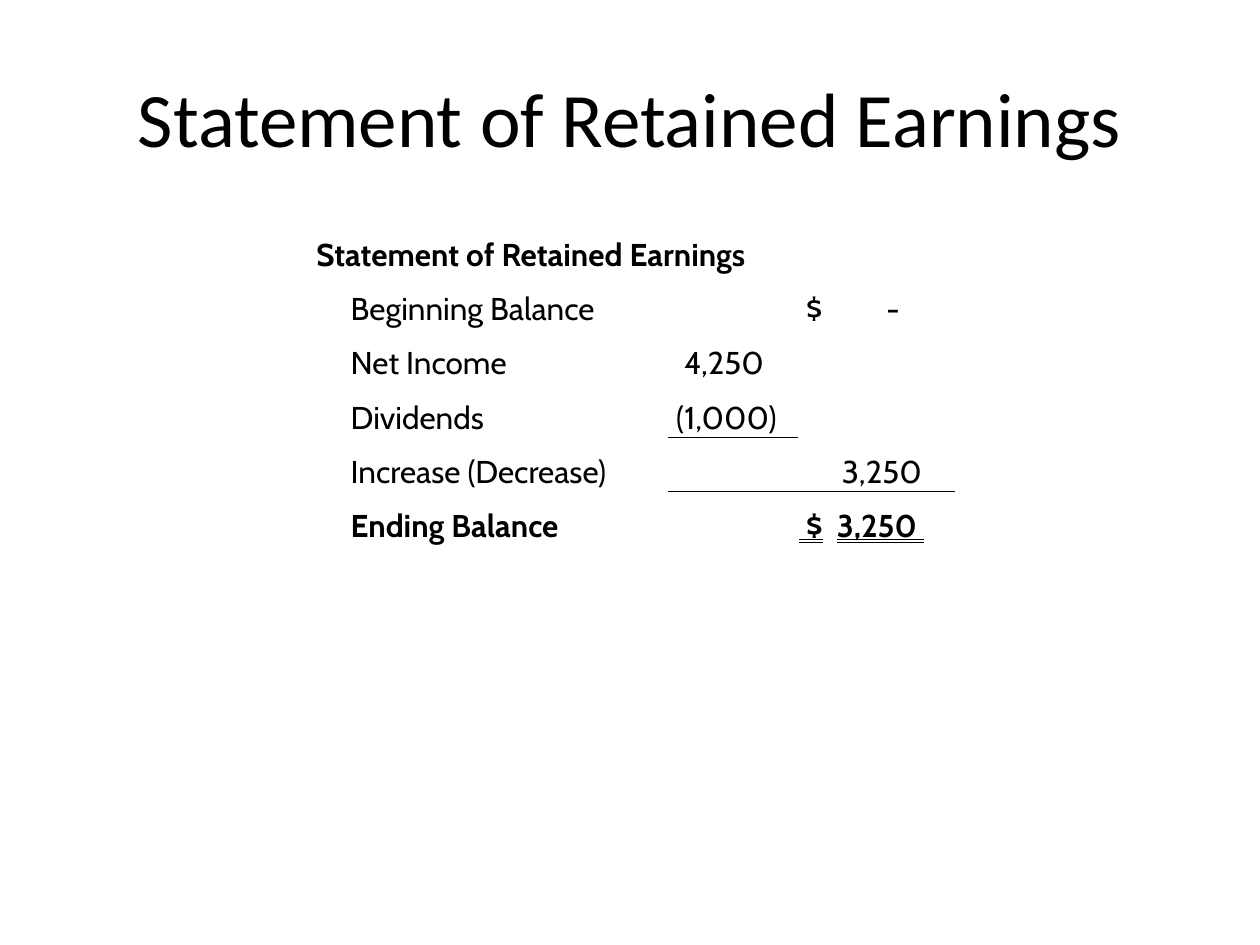
from dataclasses import dataclass

from lxml import etree
from pptx import Presentation
from pptx.dml.color import RGBColor
from pptx.enum.text import MSO_ANCHOR, MSO_UNDERLINE, PP_ALIGN
from pptx.oxml.ns import qn
from pptx.util import Cm, Pt

MIDDLE, BOTTOM = MSO_ANCHOR.MIDDLE, MSO_ANCHOR.BOTTOM
CENTER, LEFT = PP_ALIGN.CENTER, PP_ALIGN.LEFT
DOUBLE = MSO_UNDERLINE.DOUBLE_LINE
COLORS = {"ink": "000000"}
NO_STYLE = "{2D5ABB26-0587-4C30-8999-92F81FD0307C}"
COLUMN_WIDTHS = (0.69, 6.42, 2.62, 3.18)
ROW_HEIGHT = 1.09
MARGINS = {"margin_left": Cm(0.03), "margin_right": Cm(0.03),
           "margin_top": Cm(0.03), "margin_bottom": Cm(0)}
TITLE_FONT = {"name": "Calibri", "size": Pt(44)}
BODY_FONT = {"name": "Cabin", "size": Pt(18), "bold": False}
BOLD_FONT = {**BODY_FONT, "bold": True}
TOTAL_FONT = {**BOLD_FONT, "underline": DOUBLE}


@dataclass
class Entry:
    """Text of one table cell, with its indent and tab stop in centimetres."""
    row: int
    column: int
    text: str
    font: dict
    indent: float = 0
    tab: float = 0
    ruled: bool = False


LABELS = ("Beginning Balance", "Net Income", "Dividends", "Increase (Decrease)")
ENTRIES = [
    Entry(0, 0, "Statement of Retained Earnings", BOLD_FONT),
    *(Entry(row, 1, label, BODY_FONT) for row, label in enumerate(LABELS, 1)),
    Entry(5, 1, "Ending Balance", BOLD_FONT),
    Entry(1, 3, " $\t-", BODY_FONT, tab=1.76),
    Entry(2, 2, "4,250", BODY_FONT, indent=0.3),
    Entry(3, 2, "(1,000)", BODY_FONT, indent=0.14, ruled=True),
    Entry(4, 3, "3,250", BODY_FONT, indent=0.86, ruled=True),
    Entry(5, 3, " $\t3,250 ", TOTAL_FONT, tab=0.76),
]


def apply_format(target, values: dict) -> None:
    """Set each named attribute on the target."""
    for name, value in values.items():
        setattr(target, name, value)


def write_text(paragraph, text: str, font: dict, alignment) -> None:
    """Write one formatted run into the paragraph."""
    paragraph.alignment = alignment
    run = paragraph.add_run()
    run.text = text
    apply_format(run.font, font)
    run.font.color.rgb = RGBColor.from_string(COLORS["ink"])


def add_title(slide, text: str) -> None:
    """Add the centred slide title."""
    shape = slide.shapes.add_textbox(Cm(1.27), Cm(0.76), Cm(22.86), Cm(3.18))
    apply_format(shape.text_frame, {"word_wrap": True, "vertical_anchor": MIDDLE})
    write_text(shape.text_frame.paragraphs[0], text, TITLE_FONT, CENTER)


def add_rule(cell, side: str) -> None:
    """Draw a thin border on one side of the cell."""
    line = etree.Element(qn(f"a:{side}"), w=str(Pt(0.5)))
    fill = etree.SubElement(line, qn("a:solidFill"))
    etree.SubElement(fill, qn("a:srgbClr"), val=COLORS["ink"])
    cell._tc.get_or_add_tcPr().insert(0, line)


def fill_entry(table, entry: Entry) -> None:
    """Write an entry into its cell, with its rule below."""
    cell = table.cell(entry.row, entry.column)
    paragraph = cell.text_frame.paragraphs[0]
    write_text(paragraph, entry.text, entry.font, LEFT)
    properties = paragraph._p.get_or_add_pPr()
    properties.set("marL", str(Cm(entry.indent)))
    if entry.tab:
        tabs = etree.SubElement(properties, qn("a:tabLst"))
        etree.SubElement(tabs, qn("a:tab"), pos=str(Cm(entry.tab)), algn="l")
    if entry.ruled:
        add_rule(cell, "lnB")
        add_rule(table.cell(entry.row + 1, entry.column), "lnT")


def add_statement(slide) -> None:
    """Add the statement table."""
    row_count = len(LABELS) + 2
    frame = slide.shapes.add_table(
        row_count, len(COLUMN_WIDTHS), Cm(6.35), Cm(4.45),
        Cm(sum(COLUMN_WIDTHS)), Cm(ROW_HEIGHT * row_count))
    table = frame.table
    apply_format(table, {"first_row": False, "horz_banding": False})
    table._tbl.tblPr.find(qn("a:tableStyleId")).text = NO_STYLE
    for column, width in zip(table.columns, COLUMN_WIDTHS):
        column.width = Cm(width)
    for cell in table.iter_cells():
        apply_format(cell, {**MARGINS, "vertical_anchor": BOTTOM})
        cell.fill.background()
    table.cell(0, 0).merge(table.cell(0, len(COLUMN_WIDTHS) - 1))
    for entry in ENTRIES:
        fill_entry(table, entry)


def main() -> None:
    """Build the slide and save it."""
    presentation = Presentation()
    apply_format(presentation, {"slide_width": Cm(25.4), "slide_height": Cm(19.05)})
    slide = presentation.slides.add_slide(presentation.slide_layouts[6])
    add_title(slide, "Statement of Retained Earnings")
    add_statement(slide)
    presentation.save("out.pptx")


if __name__ == "__main__":
    main()
